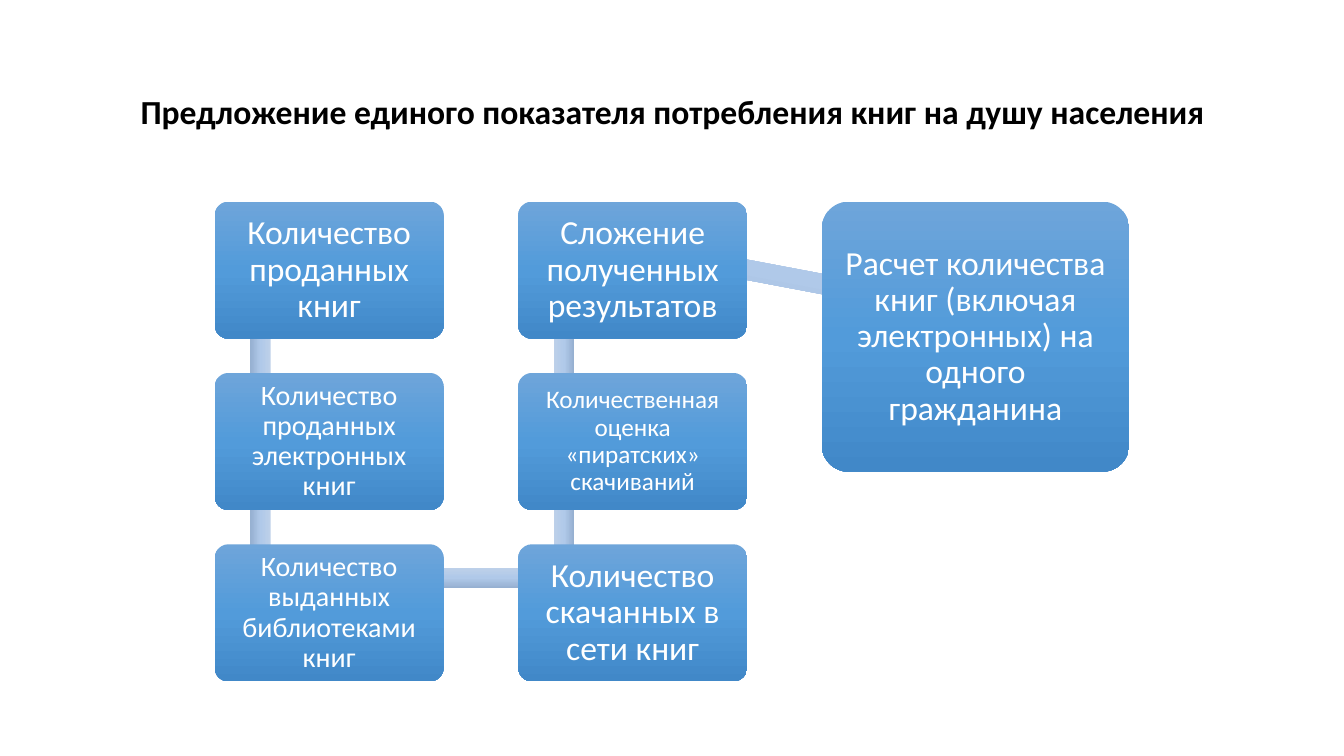
import copy
import math
from dataclasses import dataclass

import pptx
import pptx.dml.color
import pptx.enum.shapes
import pptx.enum.text
import pptx.oxml.ns
import pptx.util

SHAPES = pptx.enum.shapes.MSO_SHAPE


@dataclass(frozen=True)
class Theme:
    font: str = "Calibri"
    title: str = "000000"
    label: str = "FFFFFF"
    box: tuple = ("6EA5DA", "529BDA", "4188C8")
    link: tuple = ("BDD0E9", "B0C9E9", "96B0D1")
    large: int = 24
    medium: int = 20
    small: int = 18


@dataclass(frozen=True)
class Grid:
    left: float = 2.13
    top: float = 2.0
    column: float = 3.01
    row: float = 1.7
    width: float = 2.27
    height: float = 1.36

    def x(self, col):
        return self.left + col * self.column

    def y(self, row):
        return self.top + row * self.row

    def joint(self, col, row):
        return self.x(col) + 0.2 * self.width, self.y(row) + 0.245 * self.height


THEME = Theme()
GRID = Grid()
LINK_WIDTH = 0.2
RESULT_SIZE = (3.05, 2.68)
RESULT_JOINT = (9.01, 2.98)

STEPS = [
    (0, 0, "Количество проданных книг", THEME.large),
    (0, 1, "Количество проданных электронных книг", THEME.medium),
    (0, 2, "Количество выданных библиотеками книг", THEME.medium),
    (1, 2, "Количество скачанных в сети книг", THEME.large),
    (1, 1, "Количественная оценка «пиратских» скачиваний", THEME.small),
    (1, 0, "Сложение полученных результатов", THEME.large),
]


def write(sp, text, size=THEME.large, color=THEME.label, bold=False, inset=(0.1, 0.1)):
    tf = sp.text_frame
    tf.word_wrap = True
    tf.auto_size = pptx.enum.text.MSO_AUTO_SIZE.NONE
    tf.vertical_anchor = pptx.enum.text.MSO_ANCHOR.MIDDLE
    tf.margin_left = tf.margin_right = pptx.util.Inches(inset[0])
    tf.margin_top = tf.margin_bottom = pptx.util.Inches(inset[1])
    p = tf.paragraphs[0]
    p.alignment = pptx.enum.text.PP_ALIGN.CENTER
    p.line_spacing = 0.9
    r = p.add_run()
    r.text = text
    r.font.name = THEME.font
    r.font.size = pptx.util.Pt(size)
    r.font.bold = bold
    r.font.color.rgb = pptx.dml.color.RGBColor.from_string(color)


def add_gradient_shape(slide, kind, box, colors):
    sp = slide.shapes.add_shape(kind, *map(pptx.util.Inches, box))
    sp.shadow.inherit = False
    sp.line.fill.background()
    sp.fill.gradient()
    sp.fill.gradient_angle = 270
    stops = sp.element.spPr.find(".//" + pptx.oxml.ns.qn("a:gsLst"))
    stops.append(copy.deepcopy(stops[0]))
    for i, (stop, color) in enumerate(zip(sp.fill.gradient_stops, colors)):
        stop.color.rgb = pptx.dml.color.RGBColor.from_string(color)
        stop.position = i / 2
    return sp


def add_box(slide, x, y, width, height, text, size):
    box = (x, y, width, height)
    sp = add_gradient_shape(slide, SHAPES.ROUNDED_RECTANGLE, box, THEME.box)
    sp.adjustments[0] = 0.1
    write(sp, text, size=size)


def add_link(slide, start, end):
    dx, dy = end[0] - start[0], end[1] - start[1]
    length = math.hypot(dx, dy)
    x = (start[0] + end[0] - length) / 2
    y = (start[1] + end[1] - LINK_WIDTH) / 2
    box = (x, y, length, LINK_WIDTH)
    sp = add_gradient_shape(slide, SHAPES.RECTANGLE, box, THEME.link)
    sp.rotation = math.degrees(math.atan2(dy, dx)) % 360


def add_title(slide, text):
    sp = slide.shapes.title
    sp.left, sp.top, sp.width, sp.height = map(pptx.util.Inches, (0.92, 0.4, 11.5, 1.45))
    write(sp, text, color=THEME.title, bold=True, inset=(0.1, 0.05))


def main():
    prs = pptx.Presentation()
    prs.slide_width = pptx.util.Inches(13.33)
    prs.slide_height = pptx.util.Inches(7.5)
    slide = prs.slides.add_slide(prs.slide_layouts.get_by_name("Title Only"))
    add_title(slide, "Предложение единого показателя потребления книг на душу населения")

    joints = [GRID.joint(col, row) for col, row, _, _ in STEPS] + [RESULT_JOINT]
    for start, end in zip(joints, joints[1:]):
        add_link(slide, start, end)
    for col, row, text, size in STEPS:
        add_box(slide, GRID.x(col), GRID.y(row), GRID.width, GRID.height, text, size)
    add_box(slide, GRID.x(2), GRID.y(0), *RESULT_SIZE,
            "Расчет количества книг (включая электронных) на одного гражданина", THEME.large)
    prs.save("out.pptx")


if __name__ == "__main__":
    main()
